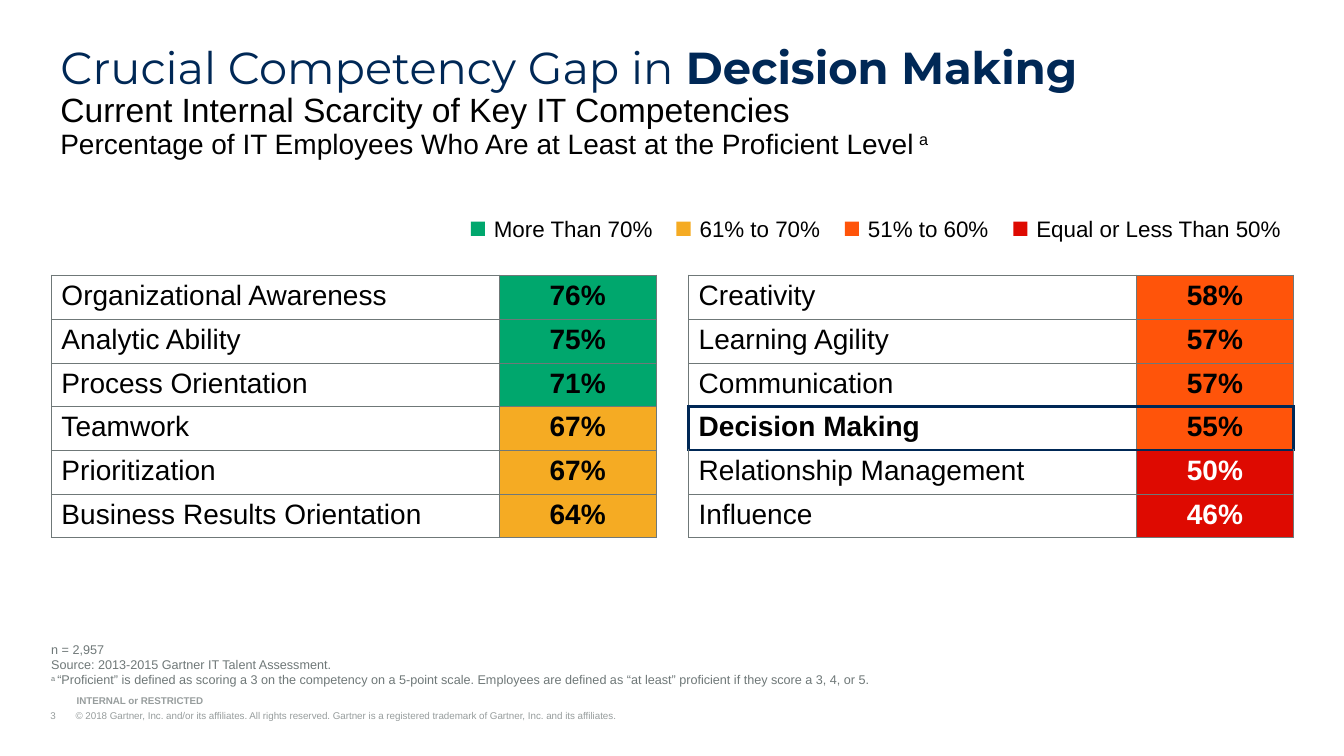
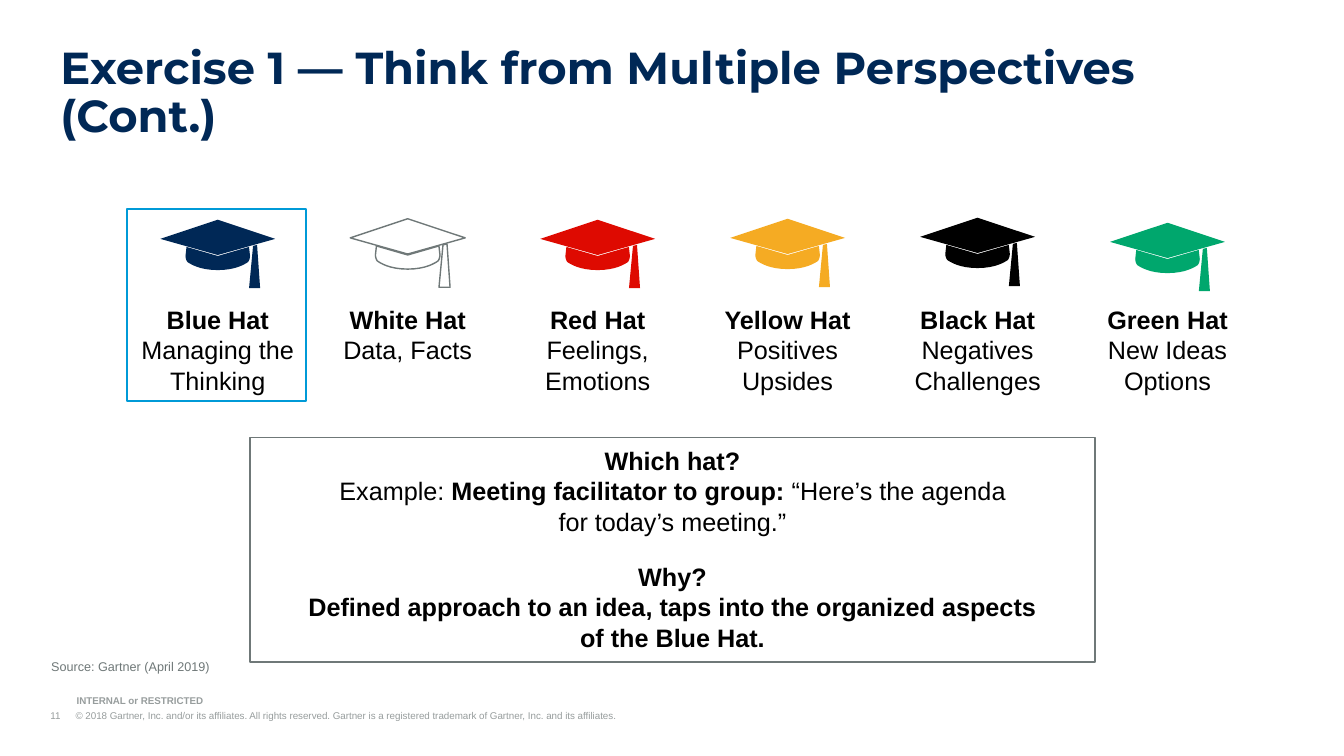
from dataclasses import dataclass

from lxml.etree import SubElement
from pptx import Presentation
from pptx.dml.color import RGBColor
from pptx.enum.shapes import MSO_SHAPE as Preset
from pptx.enum.text import MSO_ANCHOR as Anchor, PP_ALIGN as Align
from pptx.oxml.ns import qn
from pptx.util import Inches, Pt


@dataclass(frozen=True)
class Theme:
    """Colours, fonts and type sizes."""
    navy: str = "002856"
    sky: str = "009AD7"
    black: str = "000000"
    white: str = "FFFFFF"
    grey: str = "6F7878"
    pale: str = "979D9D"
    green: str = "00A76D"
    amber: str = "F5AB23"
    orange: str = "FF540A"
    red: str = "DE0A01"
    title_font: str = "Montserrat"
    body_font: str = "Arial"
    title: float = 32
    subtitle: float = 24
    table: float = 20
    body: float = 18
    legend: float = 16
    note: float = 9
    footer: float = 7


THEME = Theme()


@dataclass(frozen=True)
class Box:
    """A place on the slide, in inches."""
    left: float
    top: float
    width: float
    height: float

    def lengths(self):
        """Return the four values as lengths."""
        return [Inches(value) for value in (self.left, self.top, self.width, self.height)]


@dataclass(frozen=True)
class Run:
    """Text with whatever differs from the format of its block."""
    text: str
    bold: bool | None = None
    size: float | None = None
    font: str | None = None
    color: str | None = None
    raised: bool = False


@dataclass(frozen=True)
class Level:
    """A proficiency band and its legend entry."""
    label: str
    above: int
    color: str
    left: float
    width: float
    value_color: str = THEME.black


@dataclass(frozen=True)
class Hat:
    """A thinking hat with its label."""
    name: str
    role: str
    color: str
    top: float
    outline: str | None = None


LEVELS = (
    Level("More Than 70%", 70, THEME.green, 4.67, 1.78),
    Level("61% to 70%", 60, THEME.amber, 6.71, 1.41),
    Level("51% to 60%", 50, THEME.orange, 8.38, 1.41),
    Level("Equal or Less Than 50%", 0, THEME.red, 10.05, 2.65, THEME.white),
)
STRONGER = (
    ("Organizational Awareness", 76), ("Analytic Ability", 75), ("Process Orientation", 71),
    ("Teamwork", 67), ("Prioritization", 67), ("Business Results Orientation", 64),
)
WEAKER = (
    ("Creativity", 58), ("Learning Agility", 57), ("Communication", 57),
    ("Decision Making", 55), ("Relationship Management", 50), ("Influence", 46),
)
HATS = (
    Hat("Blue Hat", "Managing the Thinking", THEME.navy, 2.18),
    Hat("White Hat", "Data, Facts", THEME.white, 2.17, THEME.grey),
    Hat("Red Hat", "Feelings, Emotions", THEME.red, 2.18),
    Hat("Yellow Hat", "Positives Upsides", THEME.amber, 2.17),
    Hat("Black Hat", "Negatives Challenges", THEME.black, 2.16),
    Hat("Green Hat", "New Ideas Options", THEME.green, 2.21),
)
FIRST_HAT, LAST_HAT = 2.16, 11.58


def rgb(color: str) -> RGBColor:
    """Turn a hex string into a colour."""
    return RGBColor.from_string(color)


def write(frame, paragraphs, *, size=THEME.body, font=THEME.body_font, color=THEME.black,
          bold=False, align=Align.LEFT, line_spacing=None, gaps=None, tab=None) -> None:
    """Fill a text frame with paragraphs, each a string or a list of runs."""
    for index, content in enumerate(paragraphs):
        paragraph = frame.paragraphs[0] if index == 0 else frame.add_paragraph()
        paragraph.alignment = align
        if line_spacing:
            paragraph.line_spacing = line_spacing
        if gaps and index in gaps:
            paragraph.space_before = Pt(gaps[index])
        if tab:
            properties = paragraph._p.get_or_add_pPr()
            properties.set("marL", str(Inches(tab)))
            properties.set("indent", str(-Inches(tab)))
            stops = SubElement(properties, qn("a:tabLst"))
            SubElement(stops, qn("a:tab"), pos=str(Inches(tab)), algn="l")
        for part in [Run(content)] if isinstance(content, str) else content:
            for number, line in enumerate(part.text.split("\n")):
                if number:
                    paragraph.add_line_break()
                if not line:
                    continue
                run = paragraph.add_run()
                run.text = line
                run.font.size = Pt(part.size or size)
                run.font.name = part.font or font
                run.font.bold = bold if part.bold is None else part.bold
                run.font.color.rgb = rgb(part.color or color)
                if part.raised:
                    run._r.get_or_add_rPr().set("baseline", "30000")


def set_margins(frame, horizontal: float, vertical: float) -> None:
    """Set the inner margins of a text frame."""
    frame.margin_left = frame.margin_right = Inches(horizontal)
    frame.margin_top = frame.margin_bottom = Inches(vertical)


def add_text(slide, box: Box, paragraphs, *, margins=(0.1, 0.05), anchor=Anchor.TOP, **text_format):
    """Add a wrapping text box."""
    frame = slide.shapes.add_textbox(*box.lengths()).text_frame
    frame.word_wrap = True
    frame.vertical_anchor = anchor
    set_margins(frame, *margins)
    write(frame, paragraphs, **text_format)


def paint(shape, fill: str | None = None, line: str | None = None, width: float = 1) -> None:
    """Set the fill and outline of a shape and drop its shadow."""
    shape.shadow.inherit = False
    if fill:
        shape.fill.solid()
        shape.fill.fore_color.rgb = rgb(fill)
    else:
        shape.fill.background()
    if line:
        shape.line.color.rgb = rgb(line)
        shape.line.width = Pt(width)
    else:
        shape.line.fill.background()


def add_rectangle(slide, box: Box, **style):
    """Add a painted rectangle."""
    shape = slide.shapes.add_shape(Preset.RECTANGLE, *box.lengths())
    paint(shape, **style)
    return shape


def add_slide(presentation, number: int, title: list[Run]):
    """Add a slide with the shared title and footer."""
    slide = presentation.slides.add_slide(presentation.slide_layouts[6])
    footer = dict(margins=(0, 0), anchor=Anchor.BOTTOM, size=THEME.footer, color=THEME.pale)
    copyright_line = ("© 2018 Gartner, Inc. and/or its affiliates. All rights reserved. "
                      "Gartner is a registered trademark of Gartner, Inc. and its affiliates.")
    add_text(slide, Box(0.5, 7.04, 7.99, 0.12), [f"{number}\t{copyright_line}"], tab=0.25, **footer)
    add_text(slide, Box(0.76, 6.89, 2.53, 0.12), ["INTERNAL or RESTRICTED"], bold=True, **footer)
    add_text(slide, Box(0.5, 0.4, 12.33, 0.48), [title], size=THEME.title,
             font=THEME.title_font, color=THEME.navy, line_spacing=0.9)
    return slide


def add_note(slide, top: float, height: float, paragraphs) -> None:
    """Add the small source note."""
    add_text(slide, Box(0.41, top, 10.15, height), paragraphs, size=THEME.note, color=THEME.grey)


def set_border(cell, side: str, color: str, width: float) -> None:
    """Draw one border of a table cell."""
    line = SubElement(cell._tc.get_or_add_tcPr(), qn(f"a:ln{side}"), w=str(Pt(width)))
    fill = SubElement(line, qn("a:solidFill"))
    SubElement(fill, qn("a:srgbClr"), val=color)


def add_scores(slide, left: float, scores, highlight: str | None = None) -> None:
    """Add a table of competencies coloured by level."""
    box = Box(left, 2.73, 6, 2.6)
    table = slide.shapes.add_table(len(scores), 2, *box.lengths()).table
    table.first_row = table.horz_banding = False
    for column, width in zip(table.columns, (4.44, 1.56)):
        column.width = Inches(width)
    names = [name for name, _ in scores]
    chosen = names.index(highlight) if highlight else None
    last = len(scores) - 1
    for row, (name, score) in enumerate(scores):
        level = next(level for level in LEVELS if score > level.above)
        for column in range(2):
            cell = table.cell(row, column)
            edges = {"L": column == 0, "R": column == 1, "T": row == 0, "B": row == last}
            marked = {"L": row == chosen and column == 0, "R": row == chosen and column == 1,
                      "T": chosen in (row, row - 1), "B": chosen in (row, row + 1)}
            for side, outer in edges.items():
                if chosen is not None and marked[side]:
                    set_border(cell, side, THEME.navy, 2.25)
                else:
                    set_border(cell, side, THEME.grey, 1 if outer else 0.25)
            if column:
                cell.fill.solid()
                cell.fill.fore_color.rgb = rgb(level.color)
                write(cell.text_frame, [f"{score}%"], size=THEME.table, bold=True,
                      color=level.value_color, align=Align.CENTER)
            else:
                cell.fill.background()
                write(cell.text_frame, [name], size=THEME.table, bold=row == chosen)


def curve(start, first, second, end, steps: int = 8):
    """Return points along a cubic curve, without its start."""
    points = []
    for step in range(1, steps + 1):
        t = step / steps
        weights = ((1 - t) ** 3, 3 * t * (1 - t) ** 2, 3 * t * t * (1 - t), t ** 3)
        points.append(tuple(sum(weight * point[axis] for weight, point
                                in zip(weights, (start, first, second, end))) for axis in (0, 1)))
    return points


def add_cap(slide, center: float, hat: Hat) -> None:
    """Draw a mortarboard as board, crown and tassel."""
    board = [(0, 0.35), (-0.57, 0.19), (0, 0), (0.57, 0.19)]
    rim, corner = (-0.32, 0.36), (-0.3, 0.42)
    side = [(-0.31, 0.27), rim, *curve(rim, (-0.32, 0.38), (-0.31, 0.41), corner),
            *curve(corner, (-0.27, 0.44), (-0.18, 0.5), (0, 0.5))]
    crown = [(0, 0.36), *side, *[(-x, y) for x, y in reversed(side[:-1])]]
    tassel = [(0.42, 0.68), (0.31, 0.68), (0.35, 0.26), (0.39, 0.25)]
    for outline in (board, crown, tassel):
        points = [(Inches(center + x), Inches(hat.top + y)) for x, y in outline]
        builder = slide.shapes.build_freeform(*points[0])
        builder.add_line_segments(points[1:], close=True)
        paint(builder.convert_to_shape(), fill=hat.color, line=hat.outline)


def add_gap_slide(presentation) -> None:
    """Build the competency gap slide."""
    subtitle = dict(bold=False, font=THEME.body_font, color=THEME.black)
    slide = add_slide(presentation, 3, [
        Run("Crucial Competency Gap in "),
        Run("Decision Making\n", bold=True),
        Run("Current Internal Scarcity of Key IT Competencies\n", size=THEME.subtitle, **subtitle),
        Run("Percentage of IT Employees Who Are at Least at the Proficient Level",
            size=THEME.table, **subtitle),
        Run(" a", size=THEME.table, raised=True, **subtitle),
    ])
    add_scores(slide, 0.51, STRONGER)
    add_scores(slide, 6.83, WEAKER, highlight="Decision Making")
    for level in LEVELS:
        add_rectangle(slide, Box(level.left, 2.2, 0.14, 0.14), fill=level.color)
        add_text(slide, Box(level.left + 0.13, 2.09, level.width, 0.37), [level.label],
                 size=THEME.legend)
    add_note(slide, 6.32, 0.56, [
        "n = 2,957",
        "Source: 2013-2015 Gartner IT Talent Assessment.",
        [Run("a ", raised=True),
         Run("“Proficient” is defined as scoring a 3 on the competency on a 5-point scale. "
             "Employees are defined as “at least” proficient if they score a 3, 4, or 5.")],
    ])


def add_hats_slide(presentation) -> None:
    """Build the thinking hats slide."""
    slide = add_slide(presentation, 11, [
        Run("Exercise 1 — Think from Multiple Perspectives (Cont.)", bold=True)])
    add_rectangle(slide, Box(1.26, 2.07, 1.78, 1.91), line=THEME.sky, width=1.5)
    add_note(slide, 6.49, 0.25, ["Source: Gartner (April 2019)"])
    step = (LAST_HAT - FIRST_HAT) / (len(HATS) - 1)
    for index, hat in enumerate(HATS):
        center = FIRST_HAT + index * step
        add_cap(slide, center, hat)
        add_text(slide, Box(center - 0.9, 2.97, 1.8, 1.01),
                 [[Run(hat.name, bold=True)], hat.role], align=Align.CENTER)
    frame = add_rectangle(slide, Box(2.48, 4.34, 8.38, 2.23), line=THEME.grey).text_frame
    frame.word_wrap = True
    frame.vertical_anchor = Anchor.TOP
    set_margins(frame, 0.1, 0.08)
    write(frame, [
        "Which hat?",
        [Run("Example: ", bold=False), Run("Meeting facilitator to group: "),
         Run("“Here’s the agenda\nfor today’s meeting.”", bold=False)],
        "Why?",
        "Defined approach to an idea, taps into the organized aspects\nof the Blue Hat.",
    ], bold=True, align=Align.CENTER, gaps={2: 18})


def main() -> None:
    """Build and save the presentation."""
    presentation = Presentation()
    presentation.slide_width, presentation.slide_height = Inches(13.33), Inches(7.5)
    add_gap_slide(presentation)
    add_hats_slide(presentation)
    presentation.save("out.pptx")


if __name__ == "__main__":
    main()
